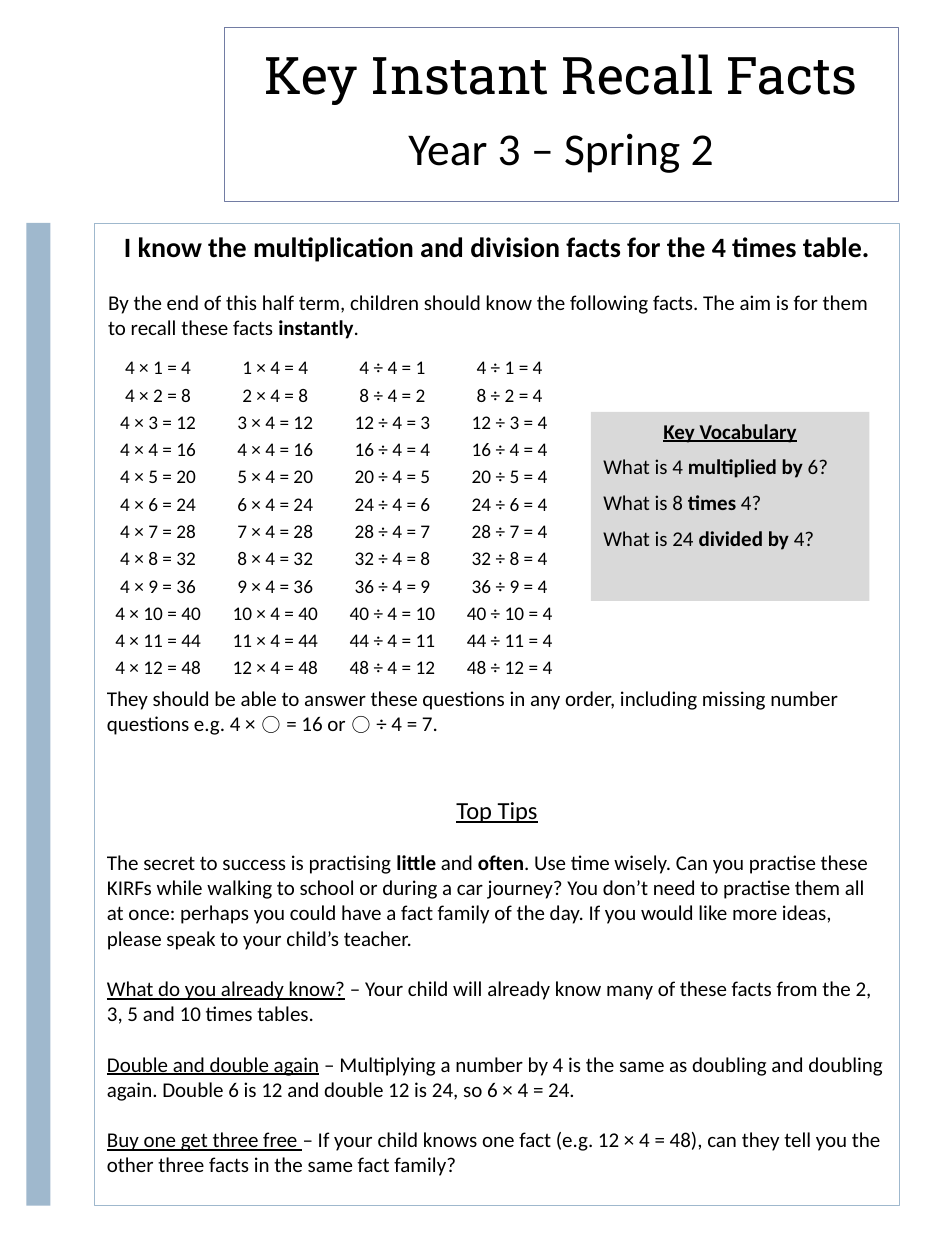
from dataclasses import dataclass

from pptx import Presentation
from pptx.dml.color import RGBColor
from pptx.enum.shapes import MSO_SHAPE
from pptx.enum.text import MSO_ANCHOR, MSO_AUTO_SIZE, PP_ALIGN
from pptx.util import Inches, Pt


@dataclass(frozen=True)
class Theme:
    title_font: str = "Roboto Slab"
    body_font: str = "Calibri"
    ink: RGBColor = RGBColor(0, 0, 0)
    header_line: RGBColor = RGBColor(0x72, 0x7C, 0xA3)
    accent: RGBColor = RGBColor(0x9F, 0xB8, 0xCD)
    vocabulary_fill: RGBColor = RGBColor(0xD9, 0xD9, 0xD9)
    title_size: float = 29.6
    subtitle_size: int = 26
    heading_size: int = 16
    tips_size: int = 14
    body_size: int = 12
    fact_size: int = 11


class SlideBuilder:
    def __init__(self, slide, theme):
        self.slide = slide
        self.theme = theme

    def format_paragraph(self, paragraph, runs, size, align=PP_ALIGN.LEFT, font=None):
        paragraph.alignment = align
        paragraph.font.name = font or self.theme.body_font
        paragraph.font.size = Pt(size)
        paragraph.font.color.rgb = self.theme.ink
        for text, style in runs:
            run = paragraph.add_run()
            run.text = text
            if "b" in style:
                run.font.bold = True
            if "u" in style:
                run.font.underline = True

    def fill_text(self, frame, paragraphs, gap=0):
        frame.word_wrap = True
        frame.auto_size = MSO_AUTO_SIZE.NONE
        frame.vertical_anchor = MSO_ANCHOR.TOP
        for index, (runs, size, align) in enumerate(paragraphs):
            paragraph = frame.add_paragraph() if index else frame.paragraphs[0]
            if index:
                paragraph.space_before = Pt(gap)
            self.format_paragraph(paragraph, runs, size, align)

    def title(self, text, left, top, width, height):
        shape = self.slide.shapes.title
        shape.left, shape.top = Inches(left), Inches(top)
        shape.width, shape.height = Inches(width), Inches(height)
        frame = shape.text_frame
        frame.word_wrap = True
        frame.auto_size = MSO_AUTO_SIZE.NONE
        frame.vertical_anchor = MSO_ANCHOR.TOP
        paragraph = frame.paragraphs[0]
        paragraph.line_spacing = 1.0
        paragraph.space_before = Pt(0)
        self.format_paragraph(paragraph, [(text, "")], self.theme.title_size,
                              PP_ALIGN.CENTER, self.theme.title_font)

    def rectangle(self, left, top, width, height, fill=None, line=None):
        shape = self.slide.shapes.add_shape(
            MSO_SHAPE.RECTANGLE, Inches(left), Inches(top), Inches(width), Inches(height))
        shape.shadow.inherit = False
        if fill is None:
            shape.fill.background()
        else:
            shape.fill.solid()
            shape.fill.fore_color.rgb = fill
        if line is None:
            shape.line.fill.background()
        else:
            shape.line.color.rgb = line
            shape.line.width = Pt(0.5)
        return shape

    def text(self, paragraphs, left, top, width, height, gap=0):
        shape = self.slide.shapes.add_textbox(
            Inches(left), Inches(top), Inches(width), Inches(height))
        self.fill_text(shape.text_frame, paragraphs, gap)

    def fact_table(self, columns, left, top, column_width, height):
        table = self.slide.shapes.add_table(
            1, len(columns), Inches(left), Inches(top),
            Inches(column_width * len(columns)), Inches(height)).table
        table.first_row = False
        table.horz_banding = False
        for index, facts in enumerate(columns):
            table.columns[index].width = Inches(column_width)
            cell = table.cell(0, index)
            cell.fill.background()
            cell.margin_left = cell.margin_right = Inches(0.07)
            cell.margin_top = cell.margin_bottom = 0
            frame = cell.text_frame
            for row, fact in enumerate(facts):
                paragraph = frame.add_paragraph() if row else frame.paragraphs[0]
                paragraph.line_spacing = 1.15
                self.format_paragraph(paragraph, [(fact, "")],
                                      self.theme.fact_size, PP_ALIGN.CENTER)


def main():
    presentation = Presentation()
    presentation.slide_width = Inches(7.5)
    presentation.slide_height = Inches(10)
    theme = Theme()
    slide = presentation.slides.add_slide(presentation.slide_layouts[5])
    builder = SlideBuilder(slide, theme)
    left, center = PP_ALIGN.LEFT, PP_ALIGN.CENTER
    size = theme.body_size
    panel_left, panel_top, panel_width, panel_height = 0.75, 1.77, 6.39, 7.8
    header_left, header_width = 1.78, 5.35

    builder.rectangle(header_left, 0.22, header_width, 1.38, line=theme.header_line)
    builder.rectangle(panel_left, panel_top, panel_width, panel_height, line=theme.accent)
    builder.rectangle(0.21, panel_top, 0.19, panel_height, fill=theme.accent)

    builder.title("Key Instant Recall Facts", header_left, 0.29, header_width, 0.59)
    builder.text([([("Year 3 – Spring 2", "")], theme.subtitle_size, center)],
                 header_left, 0.9, header_width, 0.69)
    builder.text([([("I know the multiplication and division facts for the 4 times table.", "b")],
                   theme.heading_size, center)],
                 panel_left, panel_top, panel_width, 0.55)
    builder.text([([("By the end of this half term, children should know the following facts. "
                     "The aim is for them to recall these facts ", ""),
                    ("instantly", "b"), (".", "")], size, left)],
                 0.76, 2.25, panel_width, 0.81)

    numbers = range(1, 13)
    builder.fact_table([
        [f"4 × {number} = {4 * number}" for number in numbers],
        [f"{number} × 4 = {4 * number}" for number in numbers],
        [f"{4 * number} ÷ 4 = {number}" for number in numbers],
        [f"{4 * number} ÷ {number} = 4" for number in numbers],
    ], 0.79, 2.8, 0.93, 2.74)

    vocabulary = builder.rectangle(4.69, 3.27, 2.21, 1.5, fill=theme.vocabulary_fill)
    questions = [("4", "multiplied by", "6"), ("8", "times", "4"), ("24", "divided by", "4")]
    builder.fill_text(vocabulary.text_frame, [
        ([("Key Vocabulary", "bu")], size, center),
        *[([(f"What is {first} ", ""), (f"{term} ", "b"), (f"{second}?", "")], size, left)
          for first, term, second in questions],
    ], gap=6)

    builder.text([([("They should be able to answer these questions in any order, including "
                     "missing number questions e.g. 4 × ⃝ = 16 or ⃝ ÷ 4 = 7.", "")], size, left)],
                 panel_left, 5.39, panel_width, 0.67)

    builder.text([
        ([("Top Tips", "u")], theme.tips_size, center),
        ([("The secret to success is practising ", ""), ("little", "b"), (" and ", ""),
          ("often", "b"),
          (". Use time wisely. Can you practise these KIRFs while walking to school or during "
           "a car journey? You don’t need to practise them all at once: perhaps you could have "
           "a fact family of the day. If you would like more ideas, please speak to your "
           "child’s teacher.", "")], size, left),
        ([("What do you already know?", "u"),
          (" – Your child will already know many of these facts from the 2, 3, 5 and 10 "
           "times tables.", "")], size, left),
        ([("Double and double again", "u"),
          (" – Multiplying a number by 4 is the same as doubling and doubling again. "
           "Double 6 is 12 and double 12 is 24, so 6 × 4 = 24.", "")], size, left),
        ([("Buy one get three free ", "u"),
          ("– If your child knows one fact (e.g. 12 × 4 = 48), can they tell you the other "
           "three facts in the same fact family?", "")], size, left),
    ], panel_left, 6.26, panel_width, 3.31, gap=14.4)

    presentation.save("out.pptx")


if __name__ == "__main__":
    main()
